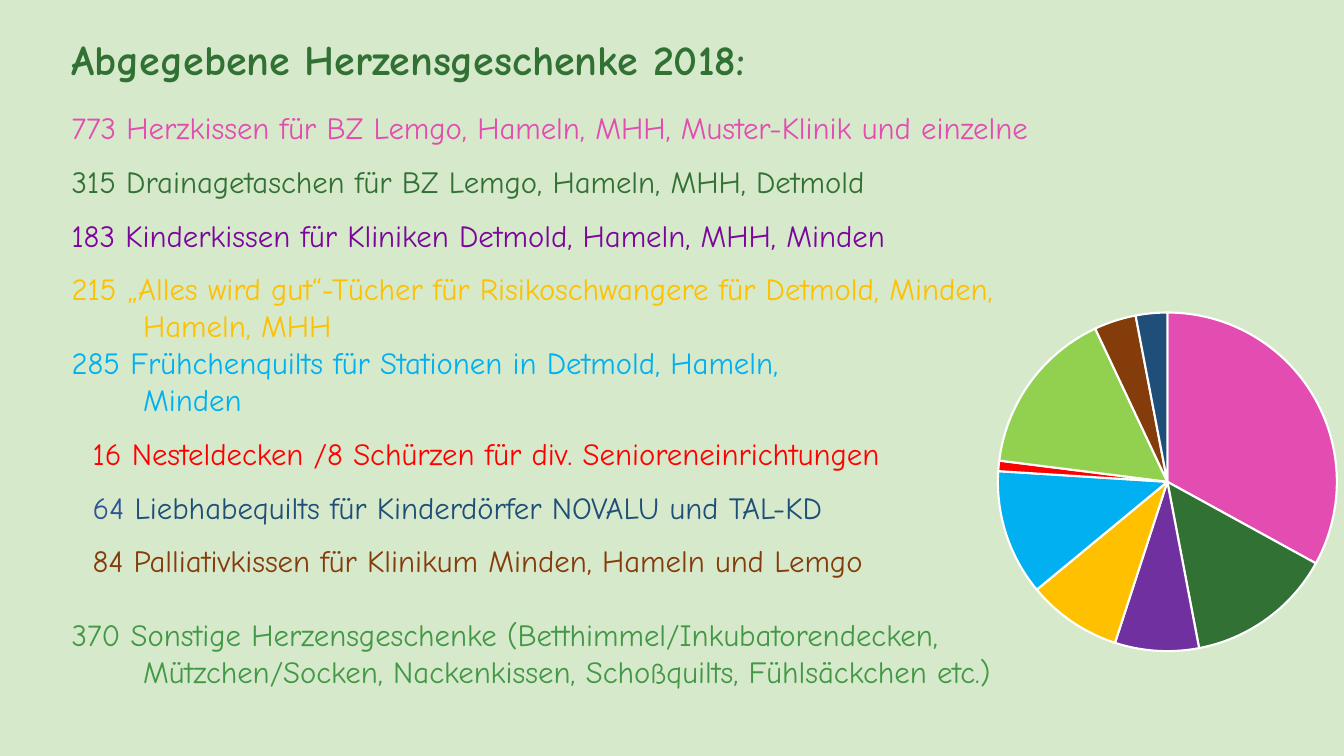
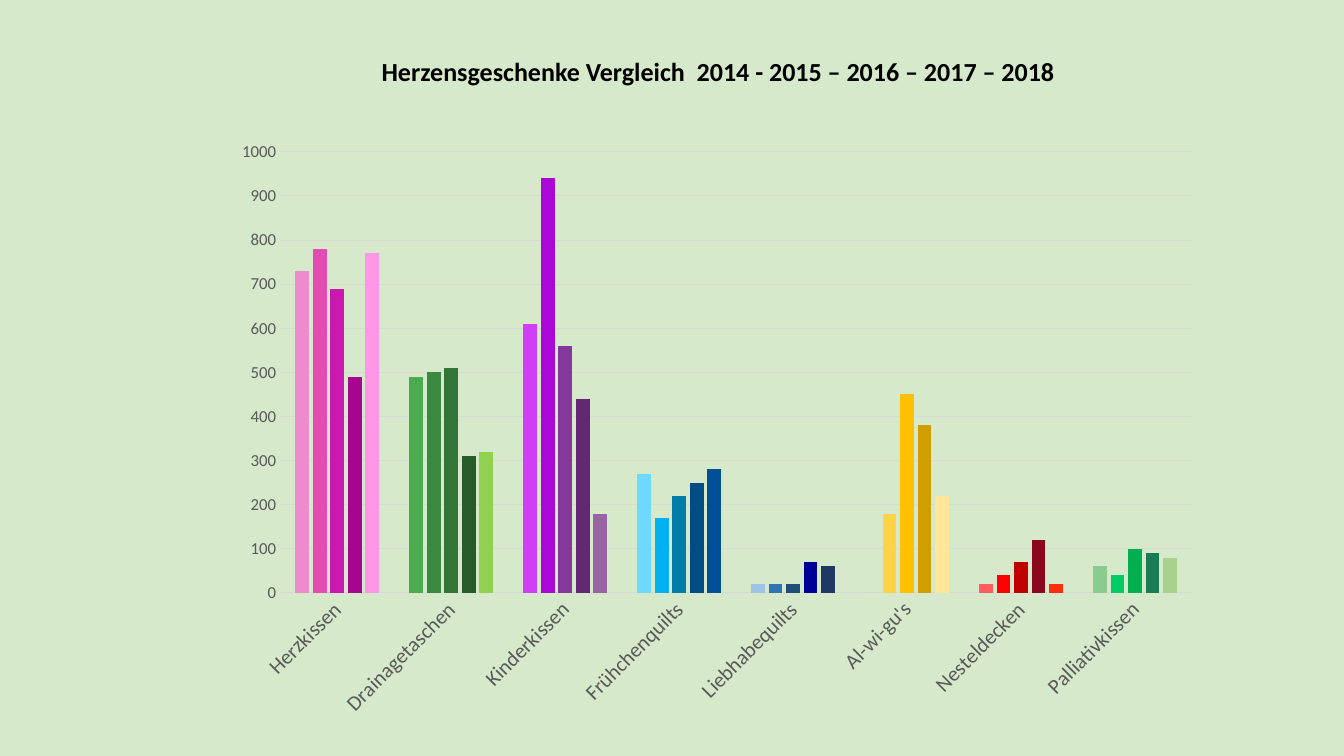
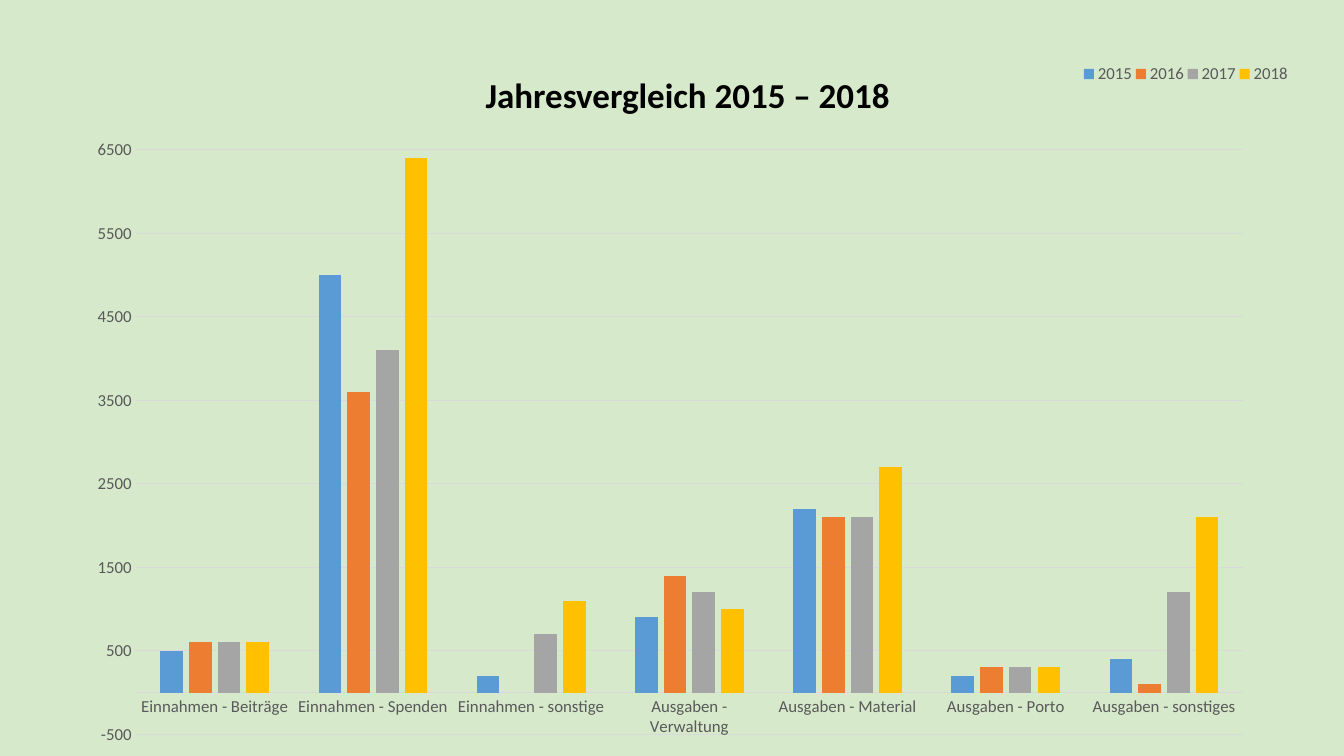
import pptx
import pptx.chart.data
import pptx.dml.color
import pptx.enum.chart
import pptx.enum.text
import pptx.oxml
import pptx.oxml.ns
import pptx.util

Inches = pptx.util.Inches
Pt = pptx.util.Pt
CHARTS = pptx.enum.chart.XL_CHART_TYPE
ALIGN = pptx.enum.text.PP_ALIGN
ANCHOR = pptx.enum.text.MSO_ANCHOR

BACKGROUND = "D6E9CB"
GREEN = "317134"
GREY = "595959"
GRID = "D9D9D9"
HAND = "Comic Neue"
SANS = "Calibri"

HANGING = 0.71
INDENTED = 0.21
GIFTS_TITLE = "Abgegebene Herzensgeschenke 2018:"
GIFTS = [
    (0, 0, [("773 Herzkissen für BZ Lemgo, Hameln, MHH, Muster-Klinik und einzelne", "E34DB1")]),
    (12, 0, [("315 Drainagetaschen für BZ Lemgo, Hameln, MHH, Detmold", GREEN)]),
    (12, 0, [("183 Kinderkissen für Kliniken Detmold, Hameln, MHH, Minden", "7C069C")]),
    (12, HANGING, [("215 „Alles wird gut“-Tücher für Risikoschwangere für Detmold, Minden,\vHameln, MHH", "FFC000")]),
    (0, HANGING, [("285 Frühchenquilts für Stationen in Detmold, Hameln,\vMinden", "00B0F0")]),
    (12, INDENTED, [("16 Nesteldecken /8 Schürzen für div. Senioreneinrichtungen", "FF0000")]),
    (12, INDENTED, [("64 ", "2F5597"), ("Liebhabequilts für Kinderdörfer NOVALU und TAL-KD", "1F4E79")]),
    (12, INDENTED, [("84 Palliativkissen für Klinikum Minden, Hameln und Lemgo", "843C0B")]),
    (26.4, HANGING, [("370 Sonstige Herzensgeschenke (Betthimmel/Inkubatorendecken,\v"
                      "Mützchen/Socken, Nackenkissen, Schoßquilts, Fühlsäckchen etc.)", "429846")]),
]
SHARES = [(33, "E34DB1"), (14, GREEN), (8, "7030A0"), (9, "FFC000"), (12, "00B0F0"),
          (1, "FF0000"), (16, "92D050"), (4, "843C0B"), (3, "1F4E79")]

COMPARISON_TITLE = "Herzensgeschenke Vergleich  2014 - 2015 – 2016 – 2017 – 2018"
COMPARISON_YEARS = ["2014", "2015", "2016", "2017", "2018"]
COMPARISON = [
    ("Herzkissen", [730, 780, 690, 490, 770], "ED8BCC E34DB1 CA18B1 A6068F FE96E8"),
    ("Drainagetaschen", [490, 500, 510, 310, 320], "4AAC4F 3B893F 337536 275B29 92D050"),
    ("Kinderkissen", [610, 940, 560, 440, 180], "D03EF8 AA08D6 83389A 602971 9964A4"),
    ("Frühchenquilts", [270, 170, 220, 250, 280], "6DD9FF 00B0F0 007CA8 004D86 005098"),
    ("Liebhabequilts", [20, 20, 20, 70, 60], "9DC3E6 2E75B6 1F4E79 000099 203864"),
    ("Al-wi-gu's", [0, 180, 450, 380, 220], "92D050 FFD347 FFC000 D09E00 FFE699"),
    ("Nesteldecken", [20, 40, 70, 120, 20], "FF5D5D FF0000 C00000 8B071D FB2F0D"),
    ("Palliativkissen", [60, 40, 100, 90, 80], "8ACC8D 00CC66 00B050 1A7C54 A9D18E"),
]

FINANCE_TITLE = "Jahresvergleich 2015 – 2018"
FINANCE_ITEMS = ["Einnahmen - Beiträge", "Einnahmen - Spenden", "Einnahmen - sonstige",
                 "Ausgaben - Verwaltung", "Ausgaben - Material", "Ausgaben - Porto",
                 "Ausgaben - sonstiges"]
FINANCE = [
    ("2015", [500, 5000, 200, 900, 2200, 200, 400], "5B9BD5"),
    ("2016", [600, 3600, None, 1400, 2100, 300, 100], "ED7D31"),
    ("2017", [600, 4100, 700, 1200, 2100, 300, 1200], "A5A5A5"),
    ("2018", [600, 6400, 1100, 1000, 2700, 300, 2100], "FFC000"),
]


def rgb(value):
    return pptx.dml.color.RGBColor.from_string(value)


def assign(target, **values):
    for name, value in values.items():
        setattr(target, name, value)


def style(font, size, color, name, bold=False):
    assign(font, size=Pt(size), name=name, bold=bold)
    font.color.rgb = rgb(color)


def place(shape, left, top, width, height):
    assign(shape, left=Inches(left), top=Inches(top), width=Inches(width), height=Inches(height))


def add_slide(deck, layout, title, box, size, color, name, align):
    slide = deck.slides.add_slide(deck.slide_layouts[layout])
    heading = slide.shapes.title
    place(heading, *box)
    heading.text_frame.text = title
    assign(heading.text_frame, vertical_anchor=ANCHOR.MIDDLE, word_wrap=True,
           auto_size=pptx.enum.text.MSO_AUTO_SIZE.NONE)
    line = heading.text_frame.paragraphs[0]
    line.alignment = align
    style(line.runs[0].font, size, color, name, True)
    return slide


def fill_gifts(body):
    place(body, 0.61, 1.03, 10.89, 5.95)
    frame = body.text_frame
    assign(frame, vertical_anchor=ANCHOR.TOP, word_wrap=True,
           auto_size=pptx.enum.text.MSO_AUTO_SIZE.NONE)
    for index, (gap, indent, parts) in enumerate(GIFTS):
        gift = frame.add_paragraph() if index else frame.paragraphs[0]
        assign(gift, space_before=Pt(gap), space_after=Pt(0), alignment=ALIGN.LEFT)
        for text, color in parts:
            for row, piece in enumerate(text.split("\v")):
                if row:
                    gift.add_line_break()
                run = gift.add_run()
                run.text = piece
                style(run.font, 22, color, HAND)
        properties = gift._p.get_or_add_pPr()
        properties.set("marL", str(Inches(indent)))
        properties.set("indent", str(-Inches(indent) if indent == HANGING else 0))
        properties.append(pptx.oxml.parse_xml(f"<a:buNone {pptx.oxml.ns.nsdecls('a')}/>"))


def layout_xml(x, y, w, h, inner=True):
    target = '<c:layoutTarget val="inner"/>' if inner else ""
    modes = "".join(f'<c:{side}Mode val="edge"/>' for side in "xy")
    sizes = "".join(f'<c:{side} val="{value}"/>' for side, value in zip("xywh", (x, y, w, h)))
    return pptx.oxml.parse_xml(f"<c:layout {pptx.oxml.ns.nsdecls('c')}><c:manualLayout>"
                               f"{target}{modes}{sizes}</c:manualLayout></c:layout>")


def add_chart(slide, kind, box, categories, series, plot_box):
    data = pptx.chart.data.CategoryChartData()
    data.categories = categories
    for name, values in series:
        data.add_series(name, values)
    chart = slide.shapes.add_chart(kind, *map(Inches, box), data).chart
    assign(chart, has_title=False, has_legend=False)
    style(chart.font, 10, "000000", SANS)
    space = chart._chartSpace
    space.chart.addnext(pptx.oxml.parse_xml(
        f"<c:spPr {pptx.oxml.ns.nsdecls('c', 'a')}><a:noFill/><a:ln><a:noFill/></a:ln></c:spPr>"))
    area = space.chart.plotArea
    for old in area.findall(pptx.oxml.ns.qn("c:layout")):
        area.remove(old)
    area.insert(0, layout_xml(*plot_box))
    return chart


def paint(part, color):
    part.format.fill.solid()
    part.format.fill.fore_color.rgb = rgb(color)


def format_columns(chart, label_size, low, high, step):
    assign(chart.plots[0], gap_width=219, overlap=-27, vary_by_categories=False)
    for series in chart.plots[0].series:
        series.invert_if_negative = False
    for axis, size in ((chart.category_axis, label_size), (chart.value_axis, 12)):
        assign(axis, major_tick_mark=pptx.enum.chart.XL_TICK_MARK.NONE,
               minor_tick_mark=pptx.enum.chart.XL_TICK_MARK.NONE)
        style(axis.tick_labels.font, size, GREY, SANS)
    values = chart.value_axis
    assign(values, minimum_scale=low, maximum_scale=high, major_unit=step,
           has_major_gridlines=True)
    values.format.line.fill.background()
    for line in (chart.category_axis.format.line, values.major_gridlines.format.line):
        line.width = Pt(0.75)
        line.color.rgb = rgb(GRID)


def build_gifts(deck):
    slide = add_slide(deck, 1, GIFTS_TITLE, (0.61, 0.28, 10.89, 0.6), 30, GREEN, HAND, ALIGN.LEFT)
    fill_gifts(slide.placeholders[1])
    chart = add_chart(slide, CHARTS.PIE, (4.83, 1.03, 8.5, 5.44),
                      [str(number + 1) for number in range(len(SHARES))],
                      [("2018", [share for share, _ in SHARES])], (0.588, 0.381, 0.412, 0.618))
    for index, (_, color) in enumerate(SHARES):
        slice_ = chart.plots[0].series[0].points[index]
        paint(slice_, color)
        slice_.format.line.width = Pt(1.5)
        slice_.format.line.color.rgb = rgb("FFFFFF")


def build_comparison(deck):
    slide = add_slide(deck, 5, COMPARISON_TITLE, (2.22, 0.41, 9.81, 0.6), 18.6, "000000", SANS,
                      ALIGN.CENTER)
    names, rows, palettes = zip(*COMPARISON)
    chart = add_chart(slide, CHARTS.COLUMN_CLUSTERED, (2.22, 0.28, 9.81, 6.97), names,
                      list(zip(COMPARISON_YEARS, zip(*rows))), (0.057, 0.176, 0.922, 0.628))
    format_columns(chart, 15, 0, 1000, 100)
    labels = chart.category_axis._element.find(pptx.oxml.ns.qn("c:txPr"))
    labels.find(pptx.oxml.ns.qn("a:bodyPr")).set("rot", "-2700000")
    for year, series in enumerate(chart.plots[0].series):
        for index, palette in enumerate(palettes):
            paint(series.points[index], palette.split()[year])


def build_finance(deck):
    slide = add_slide(deck, 5, FINANCE_TITLE, (0.83, 0.62, 11.98, 0.64), 25, "000000", SANS,
                      ALIGN.CENTER)
    chart = add_chart(slide, CHARTS.COLUMN_CLUSTERED, (0.83, 0.42, 11.98, 6.97), FINANCE_ITEMS,
                      [(year, values) for year, values, _ in FINANCE],
                      (0.043, 0.153, 0.917, 0.832))
    format_columns(chart, 12, -500, 6500, 1000)
    for series, (_, _, color) in zip(chart.plots[0].series, FINANCE):
        paint(series, color)
    chart.has_legend = True
    assign(chart.legend, position=pptx.enum.chart.XL_LEGEND_POSITION.BOTTOM,
           include_in_layout=False)
    style(chart.legend.font, 12, GREY, SANS)
    legend = chart.legend._element
    for old in legend.findall(pptx.oxml.ns.qn("c:layout")):
        legend.remove(old)
    legend.find(pptx.oxml.ns.qn("c:legendPos")).addnext(
        layout_xml(0.825, 0.02, 0.175, 0.05, inner=False))


def main():
    deck = pptx.Presentation()
    assign(deck, slide_width=Inches(13.33), slide_height=Inches(7.5))
    backdrop = deck.slide_master.background.fill
    backdrop.solid()
    backdrop.fore_color.rgb = rgb(BACKGROUND)
    for build in (build_gifts, build_comparison, build_finance):
        build(deck)
    deck.save("out.pptx")


if __name__ == "__main__":
    main()
